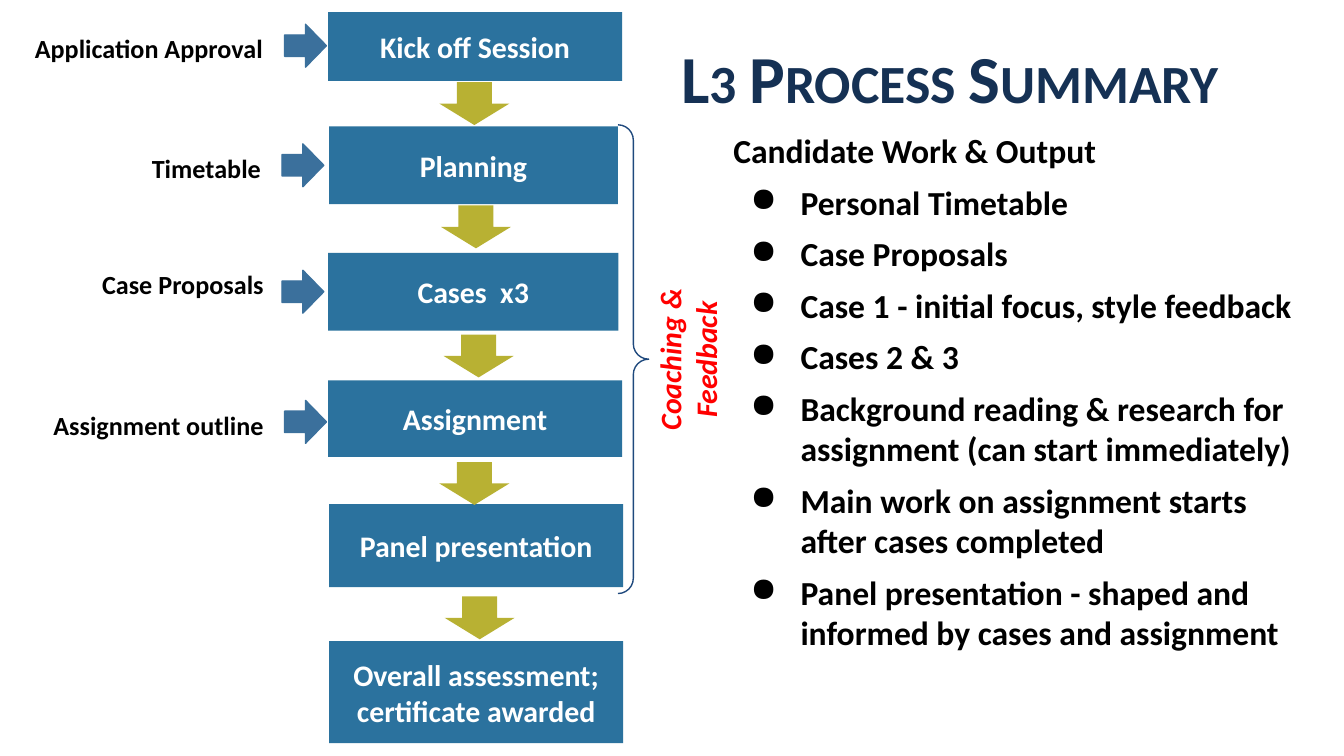
"""Build the L3 process summary slide: a flow of stages beside the candidate work list."""
from dataclasses import dataclass

from lxml.etree import SubElement
from pptx import Presentation
from pptx.dml.color import RGBColor
from pptx.enum.shapes import MSO_SHAPE as Shape
from pptx.enum.text import MSO_ANCHOR as Anchor, MSO_AUTO_SIZE as AutoSize, PP_ALIGN as Align
from pptx.oxml.ns import qn
from pptx.util import Cm, Pt


@dataclass(frozen=True)
class Theme:
    font: str = "Calibri"
    stage: str = "2B729E"
    flow: str = "B8B133"
    entry: str = "3B709C"
    brace: str = "1F497D"
    title: str = "153154"
    accent: str = "FF0000"
    dark: str = "000000"
    light: str = "FFFFFF"
    title_size: int = 36
    body_size: int = 18
    stage_size: int = 16
    label_size: int = 14


THEME = Theme()

STAGES = [
    ("Kick off Session", 6.2, 0.23, 5.56, 1.3),
    ("Planning", 6.22, 2.39, 5.46, 1.47),
    ("Cases  x3", 6.2, 4.78, 5.49, 1.47),
    ("Assignment", 6.2, 7.19, 5.56, 1.45),
    ("Panel presentation", 6.22, 9.53, 5.56, 1.57),
    ("Overall assessment; certificate awarded", 6.22, 12.12, 5.56, 1.93),
]
FLOW_ARROWS = [(8.56, 1.3), (8.59, 3.63), (8.64, 6.07), (8.56, 8.48), (8.66, 11.02)]
ENTRY_ARROWS = [(5.38, 0.46), (5.33, 2.72), (5.33, 5.11), (5.38, 7.57)]
LABELS = [
    ("Application Approval", 0.41, 0.36, 4.93, 1.04),
    ("Timetable", 2.62, 2.64, 2.64, 0.97),
    ("Case Proposals", 1.68, 4.83, 3.86, 0.97),
    ("Assignment outline", 0.76, 7.49, 4.57, 0.97),
]
WORK_HEADING = "Candidate Work & Output"
WORK_ITEMS = [
    "Personal Timetable",
    "Case Proposals",
    "Case 1 - initial focus, style feedback",
    "Cases 2 & 3",
    "Background reading & research for assignment (can start immediately)",
    "Main work on assignment starts after cases completed",
    "Panel presentation - shaped and informed by cases and assignment",
]


def add_span(para, text, size, color, italic=False):
    """Append a bold run to a paragraph and return it."""
    span = para.add_run()
    span.text = text
    font = span.font
    font.name, font.size, font.bold = THEME.font, Pt(size), True
    font.color.rgb = RGBColor.from_string(color)
    if italic:
        font.italic = True
    return span


def add_figure(page, kind, place, fill=None, line=None):
    """Add a preset shape with the given fill and outline colours."""
    figure = page.shapes.add_shape(kind, *map(Cm, place))
    figure.shadow.inherit = False
    if fill:
        figure.fill.solid()
        figure.fill.fore_color.rgb = RGBColor.from_string(fill)
    else:
        figure.fill.background()
    if line:
        figure.line.color.rgb = RGBColor.from_string(line)
        figure.line.width = Pt(0.75)
    else:
        figure.line.fill.background()
    return figure


def add_stage(page, text, *place):
    """Add one stage of the process."""
    frame = add_figure(page, Shape.RECTANGLE, place, THEME.stage).text_frame
    frame.word_wrap = True
    frame.vertical_anchor = Anchor.MIDDLE
    para = frame.paragraphs[0]
    para.alignment = Align.CENTER
    add_span(para, text, THEME.stage_size, THEME.light)


def add_text_box(page, *place):
    """Add a wrapping text box with even insets."""
    box = page.shapes.add_textbox(*map(Cm, place))
    frame = box.text_frame
    frame.word_wrap = True
    frame.margin_left = frame.margin_right = frame.margin_top = frame.margin_bottom = Cm(0.25)
    return box


def add_label(page, text, *place):
    """Add the name of an input to a stage."""
    box = add_text_box(page, *place)
    add_span(box.text_frame.paragraphs[0], text, THEME.label_size, THEME.dark)


def add_bullet(para):
    """Give a paragraph a round bullet and a hanging indent."""
    properties = para._p.get_or_add_pPr()
    properties.set("marL", str(Cm(1.27)))
    properties.set("indent", str(Cm(-0.95)))
    color = SubElement(properties, qn("a:buClr"))
    SubElement(color, qn("a:srgbClr"), val=THEME.dark)
    SubElement(properties, qn("a:buChar"), char="●")


def add_work_list(page):
    """Add the heading and bullets of the candidate's work."""
    frame = add_text_box(page, 13.61, 2.21, 11.35, 11.51).text_frame
    add_span(frame.paragraphs[0], WORK_HEADING, THEME.body_size, THEME.dark)
    for item in WORK_ITEMS:
        para = frame.add_paragraph()
        add_bullet(para)
        para.space_before = Pt(6)
        add_span(para, item, THEME.body_size, THEME.dark)
    para.space_after = Pt(6)


def add_coaching(page):
    """Add the brace over the coached stages and its upright caption."""
    brace = add_figure(page, Shape.RIGHT_BRACE, (11.68, 2.36, 0.58, 8.86), line=THEME.brace)
    brace.adjustments[0] = 0.5
    box = add_text_box(page, 11.05, 5.79, 4.04, 2.01)
    box.rotation = 270
    para = box.text_frame.paragraphs[0]
    para.alignment = Align.CENTER
    add_span(para, "Coaching & Feedback", THEME.stage_size, THEME.accent, italic=True)


def set_title(page, text):
    """Place the title and set it in small capitals."""
    title = page.shapes.title
    title.left, title.top, title.width, title.height = map(Cm, (12.47, 0.25, 10.82, 2.39))
    frame = title.text_frame
    frame.word_wrap = True
    frame.auto_size = AutoSize.NONE
    frame.vertical_anchor = Anchor.MIDDLE
    para = frame.paragraphs[0]
    para.alignment = Align.RIGHT
    span = add_span(para, text, THEME.title_size, THEME.title)
    span._r.get_or_add_rPr().set("cap", "small")


def main():
    """Build and save the deck."""
    deck = Presentation()
    deck.slide_width, deck.slide_height = Cm(25.4), Cm(14.29)
    page = deck.slides.add_slide(deck.slide_layouts[5])
    set_title(page, "L3 Process Summary")
    for stage in STAGES:
        add_stage(page, *stage)
    for left, top in FLOW_ARROWS:
        arrow = add_figure(page, Shape.RIGHT_ARROW, (left, top, 0.81, 1.32), THEME.flow)
        arrow.rotation = 90
    add_work_list(page)
    for label in LABELS:
        add_label(page, *label)
    for left, top in ENTRY_ARROWS:
        add_figure(page, Shape.RIGHT_ARROW, (left, top, 0.79, 0.81), THEME.entry, THEME.entry)
    add_coaching(page)
    deck.save("out.pptx")


if __name__ == "__main__":
    main()
